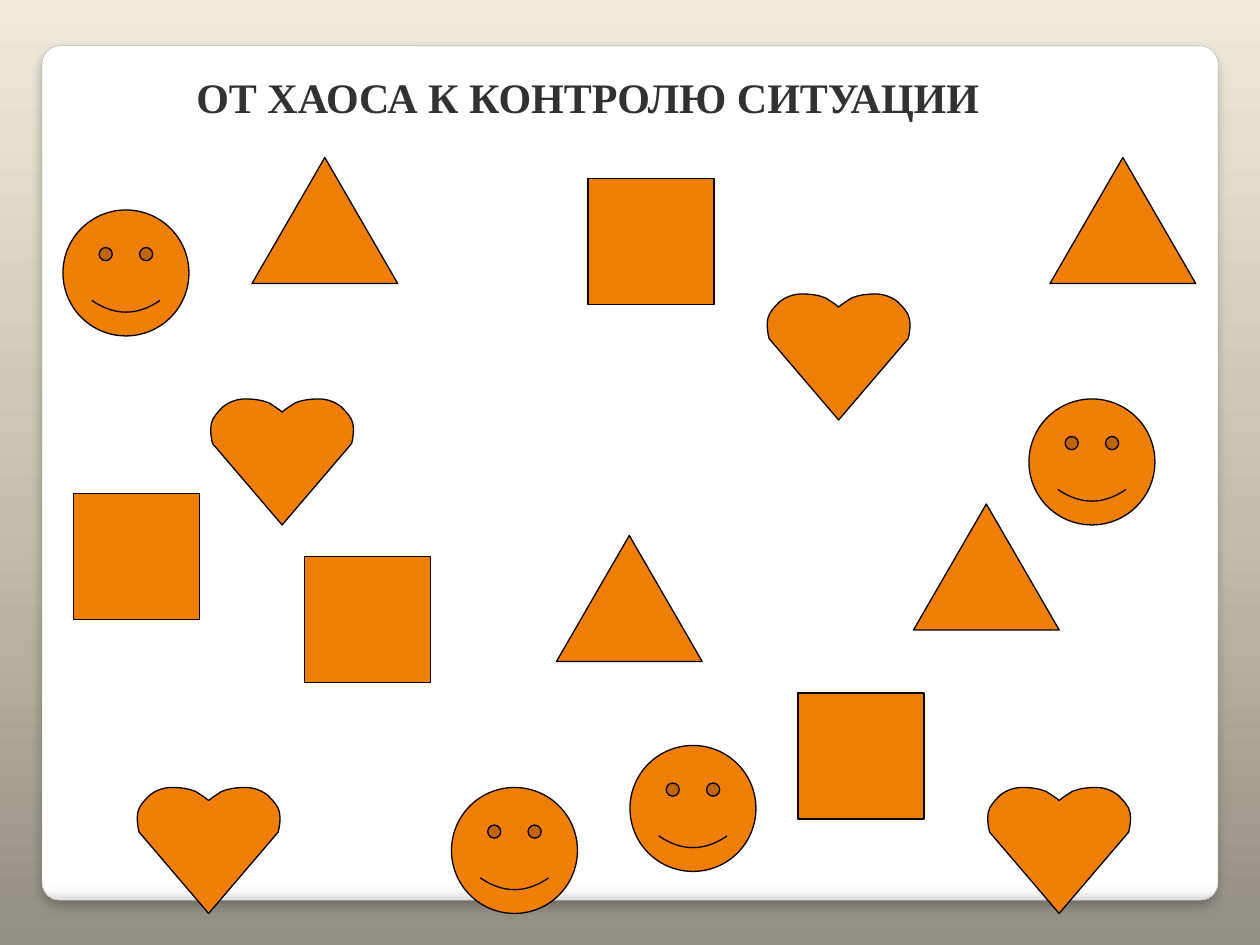
"""Build the slide «От хаоса к контролю ситуации» with its scattered figures."""
from dataclasses import dataclass

from lxml import etree
from pptx import Presentation
from pptx import util as u
from pptx.dml.color import RGBColor
from pptx.enum import shapes, text
from pptx.oxml.ns import qn

PX = u.Inches(1) // 96
COLORS = {
    "figure": "F07F09", "outline": "000000", "title": "323232",
    "card_edge": "A4A4A4", "shadow": "000000",
}
BACKDROP_STOPS = [(0, "938E82"), (45, "C4BEAD"), (100, "F0EADC")]
CARD_STOPS = [(0, "FFFFFF"), (98, "FFFFFF"), (99, "F7F7F7"), (100, "DADADA")]
HEART_HALF_WIDTH = 55
HEART_TIP = (0, 96)
HEART_LEFT_HALF = [
    (0, 10),
    (-2, 8), (-7, 5), (-10, 3),
    (-15, 1), (-21, 0), (-28, 0),
    (-34, 0), (-40, 2), (-45, 6),
    (-49, 10), (-53, 14), (-54, 19),
    (-55, 24), (-54, 30), (-53, 34),
]
HEART_CORNERS = ((752, 600), (104, 600), (160, 304), (584, 224))


@dataclass(frozen=True)
class FigureKind:
    preset: shapes.MSO_SHAPE
    width: int
    height: int
    corners: tuple


TRIANGLES = FigureKind(shapes.MSO_SHAPE.ISOSCELES_TRIANGLE, 111, 96,
                       ((192, 120), (800, 120), (696, 384), (424, 408)))
SQUARES = FigureKind(shapes.MSO_SHAPE.RECTANGLE, 96, 96,
                     ((232, 424), (56, 376), (448, 136), (608, 528)))
SMILEYS = FigureKind(shapes.MSO_SHAPE.SMILEY_FACE, 96, 96,
                     ((344, 600), (48, 160), (784, 304), (480, 568)))


def px(length: int) -> u.Emu:
    return u.Emu(length * PX)


def rgb(name: str) -> RGBColor:
    return RGBColor.from_string(COLORS[name])


def set_gradient(fill, owner, stops: list, angle: int) -> None:
    fill.gradient()
    fill.gradient_angle = angle
    stop_list = owner.find(".//" + qn("a:gsLst"))
    stop_list.clear()
    for position, color in stops:
        stop = etree.SubElement(stop_list, qn("a:gs"), pos=str(position * 1000))
        etree.SubElement(stop, qn("a:srgbClr"), val=color)


def set_outline(shape, color: str, width: float) -> None:
    shape.shadow.inherit = False
    shape.line.color.rgb = rgb(color)
    shape.line.width = u.Pt(width)


def paint_figure(figure) -> None:
    figure.fill.solid()
    figure.fill.fore_color.rgb = rgb("figure")
    set_outline(figure, "outline", 0.75)


def add_card(slide) -> None:
    card = slide.shapes.add_shape(
        shapes.MSO_SHAPE.ROUNDED_RECTANGLE, px(32), px(35), px(896), px(651))
    card.adjustments[0] = 0.021
    set_gradient(card.fill, card.element, CARD_STOPS, 270)
    set_outline(card, "card_edge", 0.16)
    effects = card.element.spPr.find(qn("a:effectLst"))
    shadow = etree.SubElement(
        effects, qn("a:outerShdw"), blurRad=str(u.Pt(6)), dist=str(u.Pt(4)),
        dir="5400000", algn="ctr", rotWithShape="0")
    shade = etree.SubElement(shadow, qn("a:srgbClr"), val=COLORS["shadow"])
    etree.SubElement(shade, qn("a:alpha"), val="25000")


def add_figures(slide, kind: FigureKind) -> None:
    for left, top in kind.corners:
        paint_figure(slide.shapes.add_shape(
            kind.preset, px(left), px(top), px(kind.width), px(kind.height)))


def bend_segments(segments: list) -> None:
    for start in range(0, len(segments), 3):
        triple = segments[start:start + 3]
        curve = etree.Element(qn("a:cubicBezTo"))
        triple[0].addprevious(curve)
        for segment in triple:
            curve.append(segment[0])
            segment.getparent().remove(segment)


def add_heart(slide, left: int, top: int) -> None:
    right_half = [(-x, y) for x, y in reversed(HEART_LEFT_HALF)]
    outline = [(px(left + HEART_HALF_WIDTH + x), px(top + y))
               for x, y in HEART_LEFT_HALF + [HEART_TIP] + right_half]
    builder = slide.shapes.build_freeform(*outline[0])
    builder.add_line_segments(outline[1:], close=True)
    heart = builder.convert_to_shape()
    segments = list(heart.element.iter(qn("a:lnTo")))
    curved = len(HEART_LEFT_HALF) - 1
    bend_segments(segments[:curved])
    bend_segments(segments[-curved:])
    paint_figure(heart)


def write_text(frame, words: str, *, font: str, size: int, color: str, bold: bool) -> None:
    frame.word_wrap = False
    frame.auto_size = text.MSO_AUTO_SIZE.SHAPE_TO_FIT_TEXT
    frame.vertical_anchor = text.MSO_ANCHOR.TOP
    paragraph = frame.paragraphs[0]
    paragraph.alignment = text.PP_ALIGN.LEFT
    run = paragraph.add_run()
    run.text = words
    run.font.name = font
    run.font.size = u.Pt(size)
    run.font.bold = bold
    run.font.color.rgb = rgb(color)


def add_title(slide) -> None:
    title = slide.shapes.title
    title.left, title.top, title.width, title.height = map(px, (140, 50, 627, 48))
    write_text(title.text_frame, "ОТ ХАОСА К КОНТРОЛЮ СИТУАЦИИ",
               font="Times New Roman", size=24, color="title", bold=True)
    title.element.getparent().append(title.element)


def main() -> None:
    deck = Presentation()
    deck.slide_width, deck.slide_height = px(960), px(720)
    slide = deck.slides.add_slide(deck.slide_layouts.get_by_name("Title Only"))
    set_gradient(slide.background.fill, slide.element, BACKDROP_STOPS, 90)
    add_card(slide)
    add_figures(slide, TRIANGLES)
    add_figures(slide, SQUARES)
    for left, top in HEART_CORNERS:
        add_heart(slide, left, top)
    add_figures(slide, SMILEYS)
    add_title(slide)
    deck.save("out.pptx")


if __name__ == "__main__":
    main()
